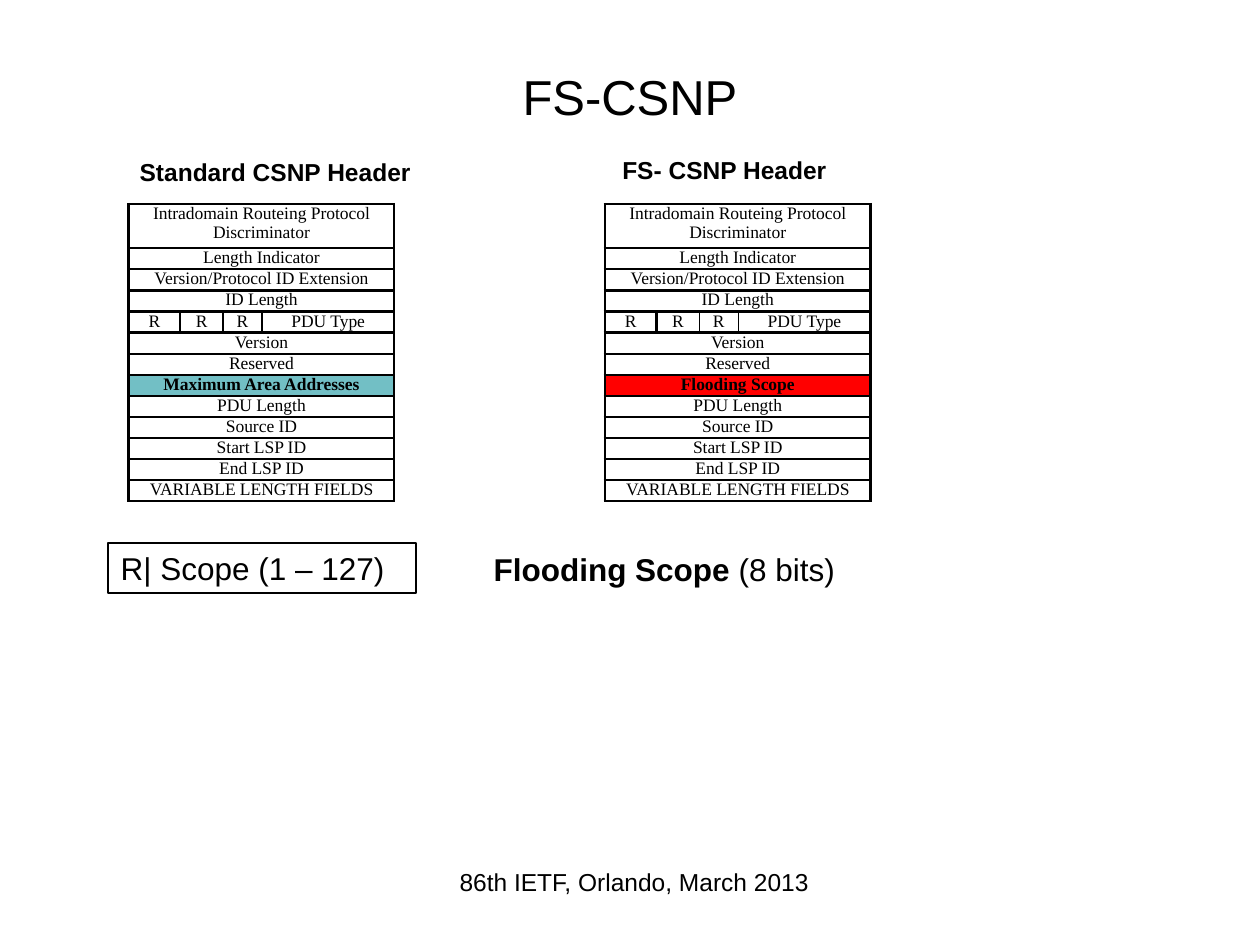
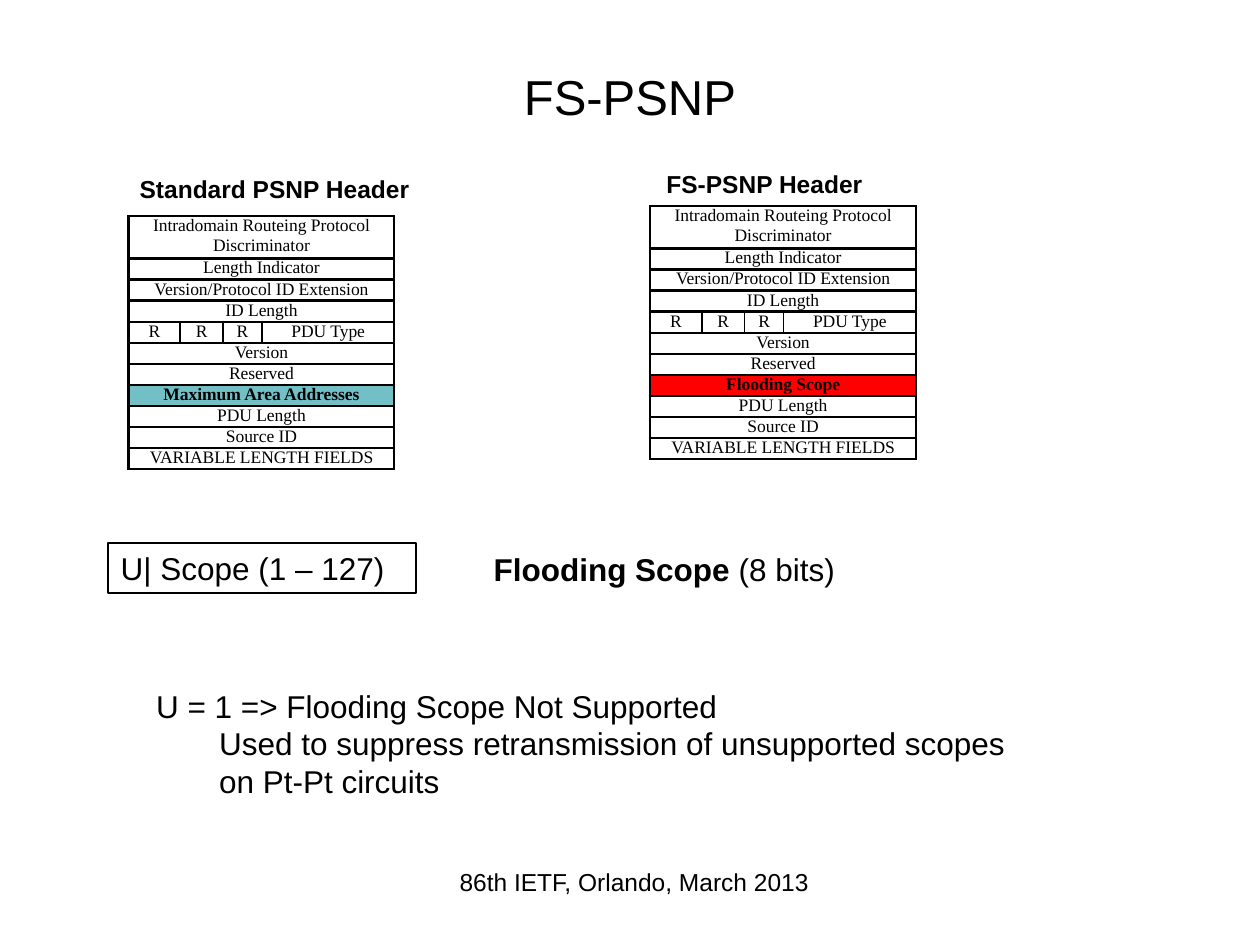
from lxml import etree
from pptx import Presentation
from pptx import util as u
from pptx.dml.color import RGBColor
from pptx.enum import shapes, text
from pptx.oxml.ns import qn

BLACK, TEAL, RED = "000000", "72BFC5", "FF0000"
SANS, SERIF = "Arial", "Times New Roman"
LEFT, CENTER = text.PP_ALIGN.LEFT, text.PP_ALIGN.CENTER
TOP, MIDDLE = text.MSO_ANCHOR.TOP, text.MSO_ANCHOR.MIDDLE


def rgb(value):
    return RGBColor.from_string(value)


def write(tf, paragraphs, size, font=SANS, align=LEFT, anchor=TOP):
    """Each paragraph is a list of (text, bold) runs."""
    tf.word_wrap = True
    tf.vertical_anchor = anchor
    for i, runs in enumerate(paragraphs):
        p = tf.paragraphs[0] if i == 0 else tf.add_paragraph()
        p.alignment = align
        for words, bold in runs:
            r = p.add_run()
            r.text = words
            r.font.size = u.Pt(size)
            r.font.name = font
            r.font.bold = bold
            r.font.color.rgb = rgb(BLACK)


# Header layout: an empty name is a spacer row, a tuple is a split row
COLS = [0.41, 0.34, 0.31, 1.05]
FLAGS = ("R", "R", "R", "PDU Type")
START = ["Intradomain Routeing Protocol Discriminator", "Length Indicator",
         "Version/Protocol ID Extension", "ID Length", FLAGS, "Version", "Reserved"]
COMMON = ["PDU Length", "Source ID"]
END = ["VARIABLE LENGTH FIELDS"]
MARKED = {"Maximum Area Addresses": TEAL, "Flooding Scope": RED}

# Tables: left, top, marked field; headings: left, top, width, text
SLIDES = [
    dict(title="FS-CSNP", flag="R", spacer=[], extra=["Start LSP ID", "End LSP ID"],
         height=2.35, first=0.35,
         tables=[(1.02, 1.62, "Maximum Area Addresses"), (4.8, 1.62, "Flooding Scope")],
         headings=[(4.84, 1.18, 2.29, "FS- CSNP Header"),
                   (1.01, 1.19, 2.81, "Standard CSNP Header")],
         note=[]),
    dict(title="FS-PSNP", flag="U", spacer=[""], extra=[],
         height=2.17, first=0.33,
         tables=[(1.02, 1.55, "Maximum Area Addresses"), (5.16, 1.47, "Flooding Scope")],
         headings=[(1.01, 1.33, 2.81, "Standard PSNP Header"),
                   (5.19, 1.29, 2.81, "FS-PSNP Header")],
         note=["U = 1 => Flooding Scope Not Supported",
               "Used to suppress retransmission of unsupported scopes on Pt-Pt circuits"]),
]

prs = Presentation()
prs.slide_width, prs.slide_height = u.Inches(10), u.Inches(7.5)

for spec_ in SLIDES:
    s = prs.slides.add_slide(prs.slide_layouts[6])

    # Title, footer, scope label and headings
    boxes = [
        (0.5, 0.3, 9, 0.93, [(spec_["title"], False)], 28, CENTER, MIDDLE),
        (2.87, 6.83, 4.33, 0.52, [("86th IETF, Orlando, March 2013", False)], 14, CENTER, TOP),
        (3.82, 4.32, 3.31, 0.4, [("Flooding Scope ", True), ("(8 bits)", False)], 18, LEFT, TOP),
    ]
    for left, top, width, heading in spec_["headings"]:
        boxes.append((left, top, width, 0.34, [(heading, True)], 14, LEFT, MIDDLE))
    for left, top, width, height, runs, size, align, anchor in boxes:
        sp = s.shapes.add_textbox(*map(u.Inches, (left, top, width, height)))
        write(sp.text_frame, [runs], size, align=align, anchor=anchor)

    # Scope field
    sp = s.shapes.add_shape(shapes.MSO_SHAPE.RECTANGLE,
                            *map(u.Inches, (0.86, 4.31, 2.44, 0.4)))
    sp.shadow.inherit = False
    sp.fill.background()
    sp.line.color.rgb = rgb(BLACK)
    sp.line.width = u.Pt(1.25)
    write(sp.text_frame, [[(spec_["flag"] + "| Scope (1 – 127)", False)]], 18)

    # PDU header tables
    for left, top, marked in spec_["tables"]:
        rows = spec_["spacer"] + START + [marked] + COMMON + spec_["extra"] + END
        row_height = (spec_["height"] - spec_["first"]) / (len(rows) - 1)
        table = s.shapes.add_table(len(rows), len(COLS), u.Inches(left), u.Inches(top),
                                   u.Inches(sum(COLS)), u.Inches(spec_["height"])).table
        table.first_row = table.horz_banding = False
        for column, width in zip(table.columns, COLS):
            column.width = u.Inches(width)
        for i, field in enumerate(rows):
            table.rows[i].height = u.Inches(spec_["first"] if field == START[0] else row_height)
            split = field == FLAGS
            for j in range(len(COLS)):
                cell = table.cell(i, j)
                cell.margin_left = cell.margin_right = u.Inches(0.07)
                cell.margin_top = cell.margin_bottom = 0
                # Borders
                weights = {"L": 1 if split and j > 1 else 1.5,
                           "R": 1 if split and j in (1, 2) else 1.5, "T": 1.5, "B": 1.5}
                for side, weight in weights.items():
                    ln = etree.SubElement(cell._tc.get_or_add_tcPr(), qn("a:ln" + side),
                                          w=str(u.Pt(weight)))
                    if not field and side != "B":
                        etree.SubElement(ln, qn("a:noFill"))
                    else:
                        fill = etree.SubElement(ln, qn("a:solidFill"))
                        etree.SubElement(fill, qn("a:srgbClr"), val=BLACK)
                # Fill
                if field in MARKED:
                    cell.fill.solid()
                    cell.fill.fore_color.rgb = rgb(MARKED[field])
                else:
                    cell.fill.background()
                # Text
                words = field[j] if split else field if j == 0 else ""
                if words:
                    write(cell.text_frame, [[(words, field in MARKED)]], 10, SERIF, CENTER)
                else:
                    etree.SubElement(cell.text_frame.paragraphs[0]._p,
                                     qn("a:endParaRPr"), sz="600")
            if not split:
                table.cell(i, 0).merge(table.cell(i, len(COLS) - 1))

    # Explanation with an indented second line
    if spec_["note"]:
        sp = s.shapes.add_textbox(*map(u.Inches, (1.14, 5.4, 7.09, 1.01)))
        write(sp.text_frame, [[(line, False)] for line in spec_["note"]], 18)
        p = sp.text_frame.paragraphs[1]
        p.level = 1
        p._p.get_or_add_pPr().set("marL", str(u.Inches(0.5)))

prs.save("out.pptx")
